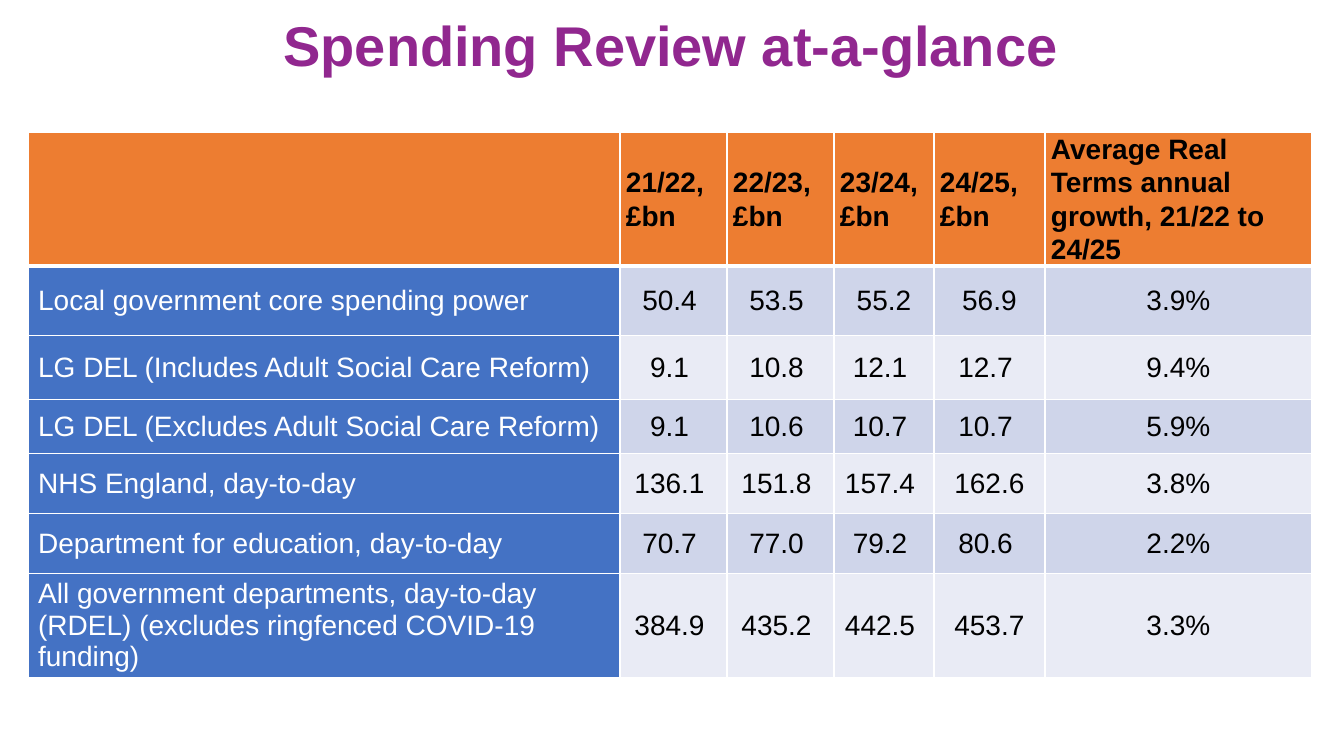
from lxml.etree import SubElement
from pptx import Presentation
from pptx.dml.color import RGBColor
from pptx.enum.text import MSO_ANCHOR, PP_ALIGN
from pptx.oxml.ns import qn
from pptx.util import Emu, Pt

PX_PER_INCH = 100.8
FONT = "Arial"
PURPLE = RGBColor(0x91, 0x27, 0x8F)
ORANGE = RGBColor(0xED, 0x7D, 0x31)
BLUE = RGBColor(0x44, 0x72, 0xC4)
BANDS = RGBColor(0xCF, 0xD5, 0xEA), RGBColor(0xE9, 0xEB, 0xF5)
WHITE = RGBColor(0xFF, 0xFF, 0xFF)
BLACK = RGBColor(0x00, 0x00, 0x00)

COLUMN_WIDTHS = 592, 107, 107, 100, 111, 267
ROW_HEIGHTS = 90, 70, 64, 54, 60, 60, 103
HEADER = ("", "21/22, £bn", "22/23, £bn", "23/24, £bn", "24/25, £bn",
          "Average Real Terms annual growth, 21/22 to 24/25")
# A tilde stands for a non-breaking space
SPENDING = (
    ("Local government core spending power~",
     "50.4~", "53.5~", "55.2", "56.9", "3.9%"),
    ("LG DEL (Includes Adult Social Care Reform)~",
     "9.1~", "10.8~", "12.1~", "12.7~", "9.4%"),
    ("LG DEL (Excludes Adult Social Care Reform)~",
     "9.1~", "10.6~", "10.7~", "10.7~", "5.9%"),
    ("NHS England, day-to-day~",
     "136.1~", "151.8~", "157.4~", "162.6", "3.8%"),
    ("Department for education, day-to-day~",
     "70.7~", "77.0~", "79.2~", "80.6~", "2.2%"),
    ("All government departments, day-to-day (RDEL) "
     "(excludes ringfenced COVID-19 funding)~",
     "384.9~", "435.2~", "442.5~", "453.7", "3.3%"),
)


def px(n):
    return Emu(round(n * 914400 / PX_PER_INCH))


def add_run(p, text, size, color, bold=False):
    r = p.add_run()
    r.text = text.replace("~", chr(160))
    r.font.name = FONT
    r.font.size = Pt(size)
    r.font.bold = bold
    r.font.color.rgb = color


def add_title(s, text):
    sp = s.shapes.title
    sp.left, sp.top, sp.width, sp.height = px(249), px(0), px(843), px(88)
    tf = sp.text_frame
    tf.vertical_anchor = MSO_ANCHOR.MIDDLE
    p = tf.paragraphs[0]
    p.alignment = PP_ALIGN.CENTER
    add_run(p, text, 40, PURPLE, bold=True)


def set_borders(cell, bottom):
    tc_pr = cell._tc.get_or_add_tcPr()
    for i, (side, width) in enumerate(
            (("lnL", 1), ("lnR", 1), ("lnT", 1), ("lnB", bottom))):
        ln = tc_pr.makeelement(qn(f"a:{side}"), {"w": str(Pt(width))})
        fill = SubElement(ln, qn("a:solidFill"))
        SubElement(fill, qn("a:srgbClr"), val=str(WHITE))
        tc_pr.insert(i, ln)


def style_cell(cell, fill, bottom=1):
    cell.fill.solid()
    cell.fill.fore_color.rgb = fill
    cell.vertical_anchor = MSO_ANCHOR.MIDDLE
    set_borders(cell, bottom)


def fill_header_cell(cell, text):
    style_cell(cell, ORANGE, bottom=3)
    cell.margin_left = cell.margin_right = px(6)
    cell.margin_top = cell.margin_bottom = 0
    p = cell.text_frame.paragraphs[0]
    p.line_spacing = 1.07
    p.space_after = Pt(8)
    if text:
        add_run(p, text, 20, BLACK, bold=True)


def fill_body_cell(cell, text, band, is_label):
    style_cell(cell, BLUE if is_label else band)
    p = cell.text_frame.paragraphs[0]
    p.alignment = PP_ALIGN.LEFT if is_label else PP_ALIGN.CENTER
    add_run(p, text, 20, WHITE if is_label else BLACK)


def add_spending_table(s):
    frame = s.shapes.add_table(len(ROW_HEIGHTS), len(COLUMN_WIDTHS),
                               px(28), px(132), px(1284), px(560))
    table = frame.table
    for column, width in zip(table.columns, COLUMN_WIDTHS):
        column.width = px(width)
    for row, height in zip(table.rows, ROW_HEIGHTS):
        row.height = px(height)

    # Header row
    for c, text in enumerate(HEADER):
        fill_header_cell(table.cell(0, c), text)

    # Banded spending rows
    for r, values in enumerate(SPENDING):
        for c, text in enumerate(values):
            fill_body_cell(table.cell(r + 1, c), text, BANDS[r % 2], c == 0)


def main():
    prs = Presentation()
    prs.slide_width, prs.slide_height = px(1344), px(756)
    s = prs.slides.add_slide(prs.slide_layouts[5])
    add_title(s, "Spending Review at-a-glance")
    add_spending_table(s)
    prs.save("out.pptx")


if __name__ == "__main__":
    main()
